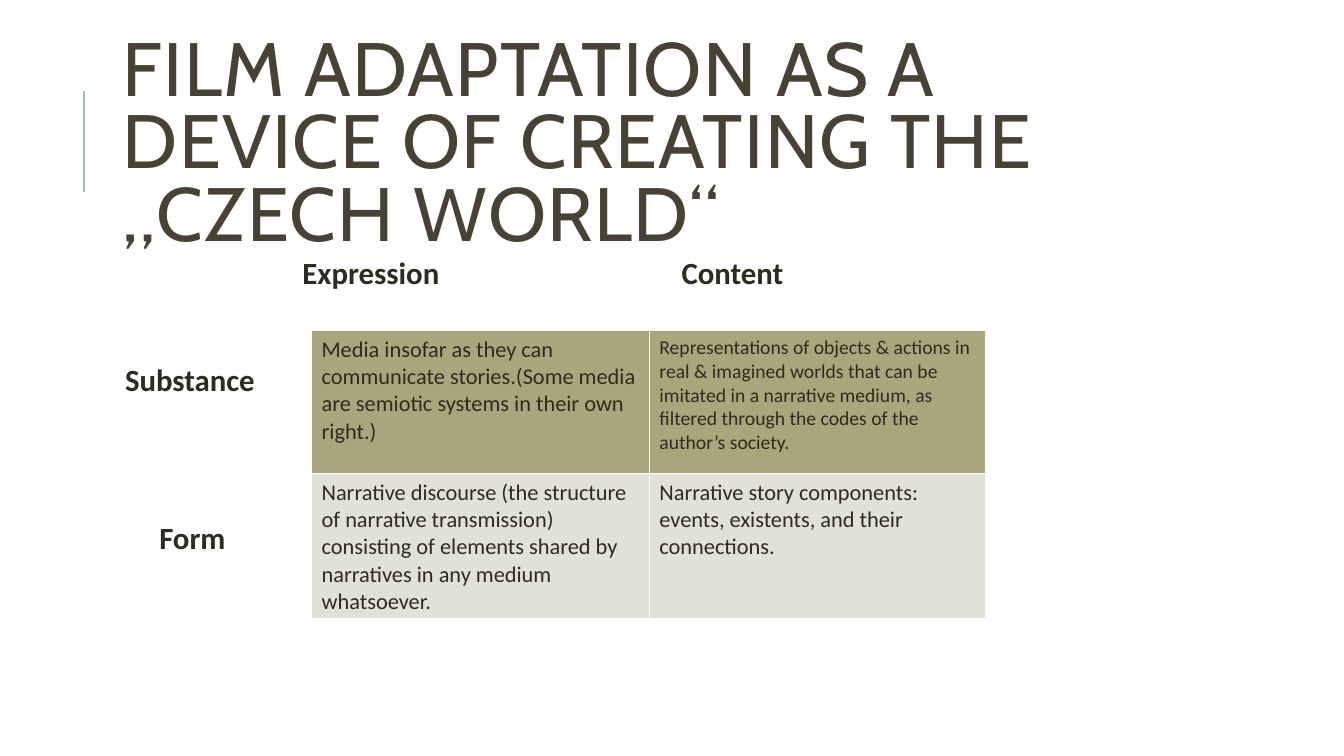
from lxml.etree import SubElement
from pptx import Presentation
from pptx.dml.color import RGBColor
from pptx.enum.shapes import MSO_CONNECTOR
from pptx.enum.text import MSO_ANCHOR
from pptx.oxml.ns import qn
from pptx.util import Inches, Pt

# Content
TITLE = "FILM ADAPTATION AS A DEVICE OF CREATING THE „CZECH WORLD“"
LABELS = [  # text, left, middle
    ("Expression", 3.0, 2.7),
    ("Content", 6.76, 2.7),
    ("Substance", 1.24, 3.76),
    ("Form", 1.58, 5.33),
]
ROWS = [  # fill, then (text, size) for each cell
    ("olive", [
        ("Media insofar as they can communicate stories.(Some media are "
         "semiotic systems in their own right.)", 16),
        ("Representations of objects & actions in real & imagined worlds that "
         "can be imitated in a narrative medium, as filtered through the codes "
         "of the author’s society.", 14),
    ]),
    ("pale", [
        ("Narrative discourse (the structure of narrative transmission) "
         "consisting of elements shared by narratives in any medium "
         "whatsoever.", 16),
        ("Narrative story components: events, existents, and their "
         "connections.", 16),
    ]),
]
COLORS = {"title": "474233", "text": "2E2B21", "rule": "9CBEBD",
          "olive": "A9A57C", "pale": "E2E1D7"}
WIDTHS = [3.35, 3.34]
ROW_H = 1.42
LABEL_W, LABEL_H = 2, 0.4


def color(name):
    return RGBColor.from_string(COLORS[name])


def write(frame, text, size, font="Calibri", tint="text", bold=False):
    run = frame.paragraphs[0].add_run()
    run.text = text
    run.font.size = Pt(size)
    run.font.name = font
    run.font.bold = bold
    run.font.color.rgb = color(tint)
    return run


def add_box(slide, left, top, width, height):
    box = slide.shapes.add_textbox(*map(Inches, (left, top, width, height)))
    frame = box.text_frame
    frame.word_wrap = True
    frame.vertical_anchor = MSO_ANCHOR.MIDDLE
    return frame


def main():
    deck = Presentation()
    deck.slide_width, deck.slide_height = Inches(13.33), Inches(7.5)
    slide = deck.slides.add_slide(deck.slide_layouts[6])

    # Accent rule
    rule = slide.shapes.add_connector(
        MSO_CONNECTOR.STRAIGHT, *map(Inches, (0.83, 1.9, 0.83, 0.9)))
    rule.line.color.rgb = color("rule")
    rule.line.width = Pt(1.5)
    SubElement(rule._element.spPr, qn("a:effectLst"))

    # Title
    frame = add_box(slide, 1.12, 0.64, 10.63, 1.64)
    frame.paragraphs[0].line_spacing = 0.8
    run = write(frame, TITLE, 54, "Cabin", "title")
    run.font._element.set("spc", "100")

    # Column and row labels
    for text, left, middle in LABELS:
        frame = add_box(slide, left, middle - LABEL_H / 2, LABEL_W, LABEL_H)
        frame.margin_left = frame.margin_right = 0
        frame.margin_top = frame.margin_bottom = 0
        write(frame, text, 22, bold=True)

    # Table
    table = slide.shapes.add_table(
        len(ROWS), len(WIDTHS), Inches(3.09), Inches(3.28),
        Inches(sum(WIDTHS)), Inches(ROW_H * len(ROWS))).table
    table.first_row = table.horz_banding = False
    for col, width in zip(table.columns, WIDTHS):
        col.width = Inches(width)
    for r, (fill, cells) in enumerate(ROWS):
        table.rows[r].height = Inches(ROW_H)
        for c, (text, size) in enumerate(cells):
            cell = table.cell(r, c)
            cell.fill.solid()
            cell.fill.fore_color.rgb = color(fill)
            write(cell.text_frame, text, size)

    deck.save("out.pptx")


if __name__ == "__main__":
    main()
